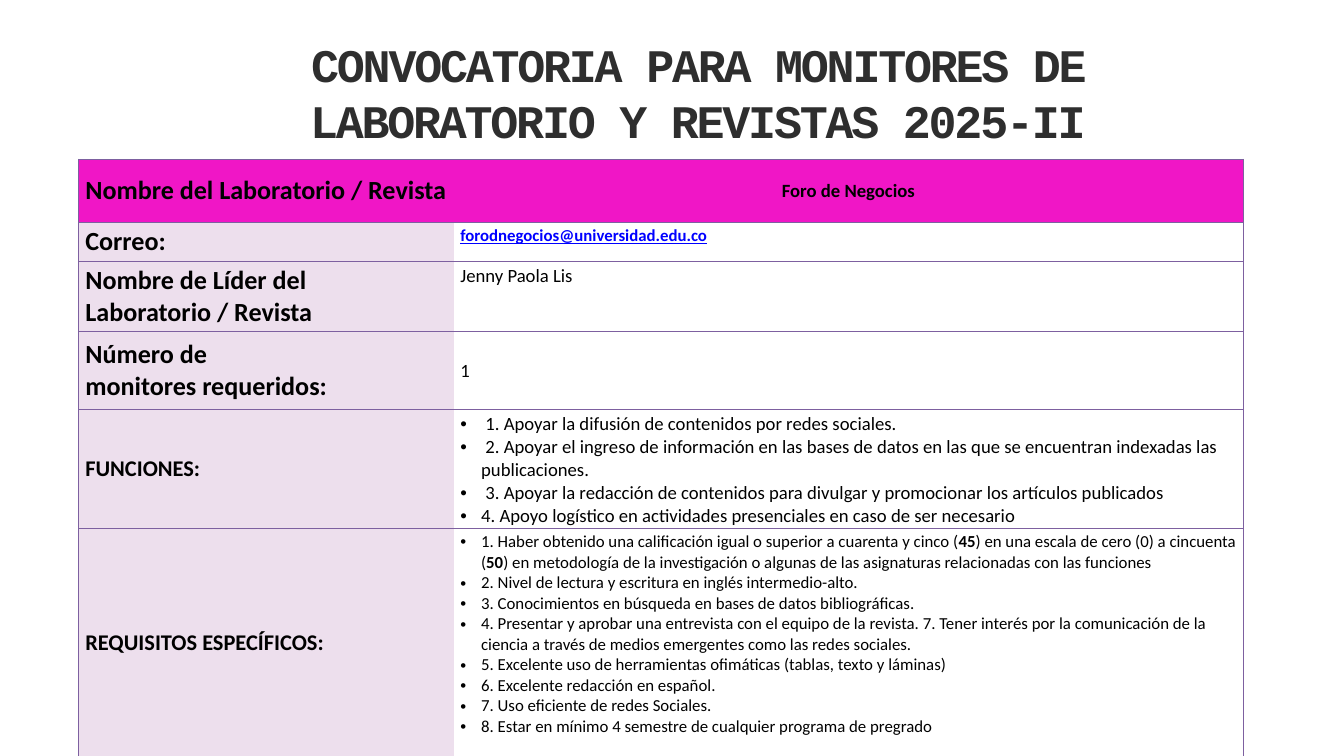
from lxml import etree
from pptx import Presentation
from pptx.dml.color import RGBColor
from pptx.enum.text import MSO_ANCHOR, MSO_AUTO_SIZE, PP_ALIGN
from pptx.oxml.ns import qn
from pptx.util import Inches, Pt

CENTER, LEFT = PP_ALIGN.CENTER, PP_ALIGN.LEFT
TOP, MIDDLE = MSO_ANCHOR.TOP, MSO_ANCHOR.MIDDLE
NO_AUTOFIT = MSO_AUTO_SIZE.NONE

BLACK = RGBColor(0x00, 0x00, 0x00)
WHITE = RGBColor(0xFF, 0xFF, 0xFF)
CHARCOAL = RGBColor(0x2E, 0x2E, 0x2E)
MAGENTA = RGBColor(0xF0, 0x16, 0xC6)
LILAC = RGBColor(0xED, 0xDF, 0xED)
PURPLE = RGBColor(0x7D, 0x60, 0xA0)
LINK_BLUE = RGBColor(0x00, 0x00, 0xFF)

HARD_SPACE = chr(160)
TITLE = "CONVOCATORIA PARA MONITORES DE LABORATORIO Y REVISTAS 2025-II"
COLUMN_WIDTHS = [5.58, 11.75]
ROW_HEIGHTS = [0.94, 0.57, 1.04, 1.16, 1.77, 3.39]
LABELS = [
    ("Nombre del Laboratorio / Revista", 28),
    ("Correo:", 28),
    ("Nombre de Líder del Laboratorio / Revista", 28),
    (f"Número de monitores{HARD_SPACE}requeridos:", 28),
    ("FUNCIONES:", 24),
    ("REQUISITOS ESPECÍFICOS:", 24),
]
DUTIES = [
    " 1. Apoyar la difusión de contenidos por redes sociales.",
    " 2. Apoyar el ingreso de información en las bases de datos en las que se "
    "encuentran indexadas las publicaciones.",
    " 3. Apoyar la redacción de contenidos para divulgar y promocionar los "
    "artículos publicados",
    "4. Apoyo logístico en actividades presenciales en caso de ser necesario",
]
REQUIREMENTS = [
    ["1. Haber obtenido una calificación igual o superior a cuarenta y cinco (",
     "45", ") en una escala de cero (0) a cincuenta (", "50",
     ") en metodología de la investigación o algunas de las asignaturas "
     "relacionadas con las funciones"],
    ["2. Nivel de lectura y escritura en inglés intermedio-alto."],
    ["3. Conocimientos en búsqueda en bases de datos bibliográficas."],
    ["4. Presentar y aprobar una entrevista con el equipo de la revista. 7. Tener "
     "interés por la comunicación de la ciencia a través de medios emergentes "
     "como las redes sociales."],
    ["5. Excelente uso de herramientas ofimáticas (tablas, texto y láminas)"],
    ["6. Excelente redacción en español."],
    ["7. Uso eficiente de redes Sociales."],
    ["8. Estar en mínimo 4 semestre de cualquier programa de pregrado"],
]


def format_span(span, size, bold=False, color=BLACK, font="Calibri"):
    span.font.name = font
    span.font.size = Pt(size)
    span.font.bold = bold
    span.font.color.rgb = color


def set_borders(cell, sides):
    props = cell._tc.get_or_add_tcPr()
    for side in "LRTB":
        line = etree.SubElement(props, qn(f"a:ln{side}"), w=str(Pt(0.75)))
        if side in sides:
            fill = etree.SubElement(line, qn("a:solidFill"))
            etree.SubElement(fill, qn("a:srgbClr"), val=str(PURPLE))
        else:
            etree.SubElement(line, qn("a:noFill"))


def set_bullet(para):
    props = para._p.get_or_add_pPr()
    props.set("marL", str(Inches(0.31)))
    props.set("indent", str(Inches(-0.31)))
    etree.SubElement(props, qn("a:buFont"), typeface="Arial")
    etree.SubElement(props, qn("a:buChar"), char="•")


def fill_cell(cell, text, size, bold=False, color=BLACK, anchor=TOP, align=LEFT):
    cell.text_frame.text = text
    cell.vertical_anchor = anchor
    para = cell.text_frame.paragraphs[0]
    para.alignment = align
    format_span(para.runs[0], size, bold, color)


def fill_list(cell, items, size):
    cell.margin_bottom = 0
    frame = cell.text_frame
    for index, pieces in enumerate(items):
        para = frame.add_paragraph() if index else frame.paragraphs[0]
        set_bullet(para)
        for position, piece in enumerate(pieces):
            span = para.add_run()
            span.text = piece
            format_span(span, size, bold=position % 2 == 1)


def place_title(page, left, top, width, height):
    title = page.shapes.title
    title.left, title.top = Inches(left), Inches(top)
    title.width, title.height = Inches(width), Inches(height)
    frame = title.text_frame
    frame.text = TITLE
    frame.word_wrap = True
    frame.auto_size = NO_AUTOFIT
    frame.vertical_anchor = TOP
    frame.margin_left = frame.margin_right = 0
    frame.margin_top = frame.margin_bottom = 0
    para = frame.paragraphs[0]
    para.alignment = CENTER
    para.line_spacing = Pt(60.1)
    span = para.runs[0]
    format_span(span, 50, True, CHARCOAL, "Courier New")
    span.font._element.set("spc", "-240")


def place_table(page, left, top, width, height):
    table = page.shapes.add_table(
        len(ROW_HEIGHTS), len(COLUMN_WIDTHS),
        Inches(left), Inches(top), Inches(width), Inches(height)).table
    table.horz_banding = False
    for column, column_width in zip(table.columns, COLUMN_WIDTHS):
        column.width = Inches(column_width)
    for index, row in enumerate(table.rows):
        row.height = Inches(ROW_HEIGHTS[index])
        label, value = row.cells
        text, size = LABELS[index]
        fill_cell(label, text, size, bold=True, anchor=MIDDLE)
        fills = (LILAC, WHITE) if index else (MAGENTA, MAGENTA)
        for cell, sides, color in zip((label, value), ("LTB", "RTB"), fills):
            set_borders(cell, sides)
            cell.fill.solid()
            cell.fill.fore_color.rgb = color

    journal, email, leader, places, duties, requirements = [
        table.cell(index, 1) for index in range(len(ROW_HEIGHTS))]
    fill_cell(journal, "Foro de Negocios", 20, bold=True, anchor=MIDDLE, align=CENTER)
    fill_cell(email, "forodnegocios@universidad.edu.co", 18, bold=True, color=LINK_BLUE)
    email.text_frame.paragraphs[0].runs[0].font.underline = True
    fill_cell(leader, "Jenny Paola Lis", 20)
    fill_cell(places, "1", 20, anchor=MIDDLE)
    fill_list(duties, [[duty] for duty in DUTIES], 20)
    fill_list(requirements, REQUIREMENTS, 18)


def main():
    deck = Presentation()
    deck.slide_width, deck.slide_height = Inches(20), Inches(11.25)
    page = deck.slides.add_slide(deck.slide_layouts[5])
    place_title(page, 3.16, 0.53, 14.45, 2.52)
    place_table(page, 1.17, 2.37, 17.33, 8.87)
    deck.save("out.pptx")


if __name__ == "__main__":
    main()
